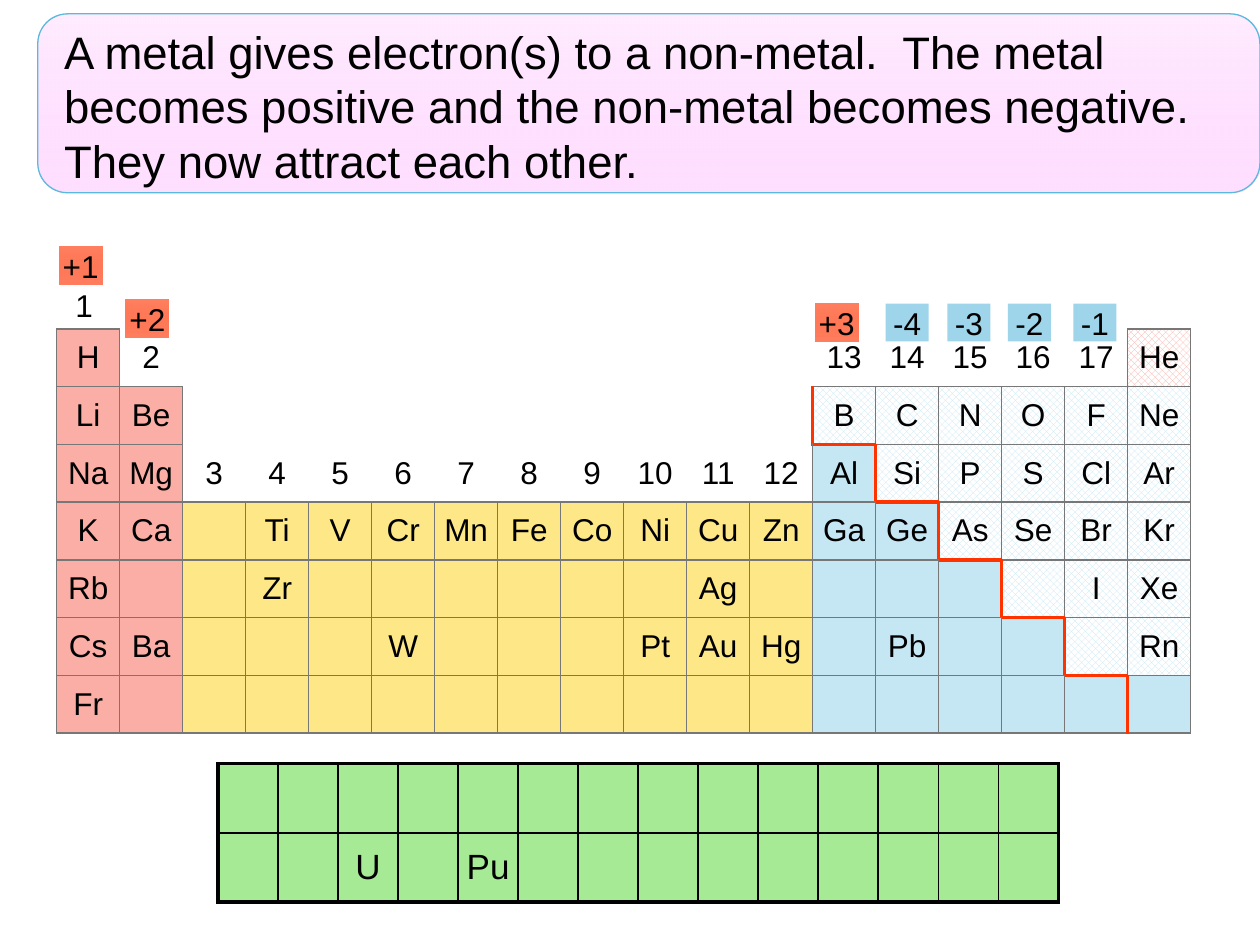
from dataclasses import dataclass

from lxml import etree
from pptx import Presentation
from pptx.dml.color import RGBColor
from pptx.enum.dml import MSO_PATTERN
from pptx.enum.shapes import MSO_SHAPE
from pptx.enum.text import MSO_ANCHOR, PP_ALIGN
from pptx.oxml.ns import qn
from pptx.util import Inches, Pt

RECTANGLE, ROUNDED = MSO_SHAPE.RECTANGLE, MSO_SHAPE.ROUNDED_RECTANGLE
MIDDLE, CENTER, LEFT = MSO_ANCHOR.MIDDLE, PP_ALIGN.CENTER, PP_ALIGN.LEFT
CHECKS = MSO_PATTERN.LARGE_CHECKER_BOARD
COLUMNS, ROWS = 100, 75
SIDES = {"L": (0, -1), "R": (0, 1), "T": (-1, 0), "B": (1, 0)}


@dataclass(frozen=True)
class Theme:
    font: str = "Arial"
    ink: str = "000000"
    paper: str = "FFFFFF"
    rose: str = "FAAEA6"
    gold: str = "FDE787"
    sky: str = "C5E6F3"
    green: str = "A6EA96"
    grid: str = "777777"
    stair: str = "FF3300"
    banner_line: str = "5CB9DE"
    banner: tuple = (("FFECFF", 100), ("FFCCFF", 61))
    positive: tuple = (("FF3300", 61), ("FF7D5D", 100))
    negative: tuple = (("89CCE7", 81),)
    headline_size: int = 26
    label_size: int = 18
    series_size: int = 20
    thin: float = 1
    thick: float = 2.25


THEME = Theme()
HEADLINE = ("A metal gives electron(s) to a non-metal.  The metal becomes positive and "
            "the non-metal becomes negative.  They now attract each other.")
# A dot stands for a cell without text.
ELEMENTS = [line.split() for line in (
    "H 2 . . . . . . . . . . 13 14 15 16 17 He",
    "Li Be . . . . . . . . . . B C N O F Ne",
    "Na Mg 3 4 5 6 7 8 9 10 11 12 Al Si P S Cl Ar",
    "K Ca . Ti V Cr Mn Fe Co Ni Cu Zn Ga Ge As Se Br Kr",
    "Rb . . Zr . . . . . . Ag . . . . . I Xe",
    "Cs Ba . . . W . . . Pt Au Hg . Pb . . . Rn",
    "Fr . . . . . . . . . . . . . . . . .",
)]
INNER_SERIES = [["."] * 14, ". . U . Pu . . . . . . . . .".split()]
POSITIVE_CHARGES = (("+1", 4.7, 19.6), ("+2", 10, 23.8), ("+3", 64.7, 24.1))
NEGATIVE_CHARGES = (("-4", 70.3), ("-3", 75.2), ("-2", 80), ("-1", 85.2))


def beyond_stair(row, column):
    return column >= 11 + row


def element_fill(row, column):
    """Colour and whether it is checkered, or None for a cell outside the table."""
    if row == 0 and column == 17:
        return THEME.rose, True
    if column == 0 or (column == 1 and row >= 1):
        return THEME.rose, False
    if 2 <= column <= 11 and row >= 3:
        return THEME.gold, False
    if column >= 12 and row >= 1:
        return THEME.sky, beyond_stair(row, column) and row < 6
    return None


def element_border(row, column, side):
    down, right = SIDES[side]
    near = (row + down, column + right)
    inside = 0 <= near[0] < 7 and 0 <= near[1] < 18
    if inside and min(row, near[0]) >= 1 and beyond_stair(row, column) != beyond_stair(*near):
        return THEME.stair, THEME.thick
    if element_fill(row, column) or (inside and element_fill(*near)):
        return THEME.grid, THEME.thin
    return None


def series_fill(row, column):
    return THEME.green, False


def series_border(row, column, side):
    down, right = SIDES[side]
    inside = 0 <= row + down < 2 and 0 <= column + right < 14
    return THEME.ink, THEME.thin if inside else THEME.thick


class SlideBuilder:
    def __init__(self, presentation, theme):
        self.theme = theme
        self.column = presentation.slide_width / COLUMNS
        self.row = presentation.slide_height / ROWS
        self.slide = presentation.slides.add_slide(presentation.slide_layouts[6])

    def place(self, left, top, width, height):
        """Turn grid columns and rows into slide lengths."""
        return (round(left * self.column), round(top * self.row),
                round(width * self.column), round(height * self.row))

    def add_words(self, frame, text, size, align):
        paragraph = frame.paragraphs[0]
        paragraph.alignment = align
        run = paragraph.add_run()
        run.text = text
        run.font.name, run.font.size = self.theme.font, Pt(size)
        run.font.color.rgb = RGBColor.from_string(self.theme.ink)

    def text(self, text, box, size):
        frame = self.slide.shapes.add_textbox(*self.place(*box)).text_frame
        frame.word_wrap = True
        self.add_words(frame, text, size, LEFT)

    def shape(self, kind, box, paints, line=None):
        """Paints are (colour, opacity) pairs: one is solid, two run from top to bottom."""
        shape = self.slide.shapes.add_shape(kind, *self.place(*box))
        shape.shadow.inherit = False
        if len(paints) == 1:
            shape.fill.solid()
            targets = [shape.fill.fore_color]
        else:
            shape.fill.gradient()
            shape.fill.gradient_angle = 270
            targets = [stop.color for stop in shape.fill.gradient_stops]
        for target, (color, _) in zip(targets, paints):
            target.rgb = RGBColor.from_string(color)
        nodes = list(shape.element.spPr.iter(qn("a:srgbClr")))
        for node, (_, opacity) in zip(nodes, paints):
            if opacity < 100:
                etree.SubElement(node, qn("a:alpha"), val=str(opacity * 1000))
        if line:
            shape.line.color.rgb = RGBColor.from_string(line)
            shape.line.width = Pt(0.75)
        else:
            shape.line.fill.background()
        return shape

    def charge(self, text, left, top, paints):
        frame = self.shape(RECTANGLE, (left, top, 3.4, 3), paints).text_frame
        frame.margin_left = frame.margin_right = frame.margin_top = frame.margin_bottom = 0
        frame.vertical_anchor = MIDDLE
        self.add_words(frame, text, self.theme.label_size, CENTER)

    def border(self, cell, position, side, stroke):
        properties = cell._tc.get_or_add_tcPr()
        color, width = stroke or (None, 0)
        line = etree.Element(qn(f"a:ln{side}"), w=str(Pt(width)))
        if stroke:
            fill = etree.SubElement(line, qn("a:solidFill"))
            etree.SubElement(fill, qn("a:srgbClr"), val=color)
        else:
            etree.SubElement(line, qn("a:noFill"))
        properties.insert(position, line)

    def paint_cell(self, cell, paint):
        if not paint:
            cell.fill.background()
            return
        color, checkered = paint
        if checkered:
            cell.fill.patterned()
            cell.fill.pattern = CHECKS
            cell.fill.back_color.rgb = RGBColor.from_string(self.theme.paper)
        else:
            cell.fill.solid()
        cell.fill.fore_color.rgb = RGBColor.from_string(color)

    def table(self, symbols, box, size, fill_of, border_of):
        frame = self.slide.shapes.add_table(len(symbols), len(symbols[0]), *self.place(*box))
        table = frame.table
        table.first_row = table.horz_banding = False
        for row, line in enumerate(symbols):
            for column, symbol in enumerate(line):
                cell = table.cell(row, column)
                cell.margin_left = cell.margin_right = cell.margin_top = cell.margin_bottom = 0
                cell.vertical_anchor = MIDDLE
                self.paint_cell(cell, fill_of(row, column))
                for position, side in enumerate(SIDES):
                    self.border(cell, position, side, border_of(row, column, side))
                if symbol != ".":
                    self.add_words(cell.text_frame, symbol, size, CENTER)


def main():
    presentation = Presentation()
    presentation.slide_width, presentation.slide_height = Inches(10), Inches(7.5)
    builder = SlideBuilder(presentation, THEME)
    builder.shape(ROUNDED, (3, 1.1, 97, 14.2), THEME.banner, THEME.banner_line)
    builder.table(ELEMENTS, (4.5, 26.1, 90, 32.1), THEME.label_size,
                  element_fill, element_border)
    builder.table(INNER_SERIES, (17.3, 60.6, 66.7, 11), THEME.series_size,
                  series_fill, series_border)
    builder.text("1", (5, 22.2, 3.4, 4), THEME.label_size)
    builder.text(HEADLINE, (4.1, 1.4, 92.8, 14), THEME.headline_size)
    for text, left, top in POSITIVE_CHARGES:
        builder.charge(text, left, top, THEME.positive)
    for text, left in NEGATIVE_CHARGES:
        builder.charge(text, left, 24.1, THEME.negative)
    presentation.save("out.pptx")


if __name__ == "__main__":
    main()
